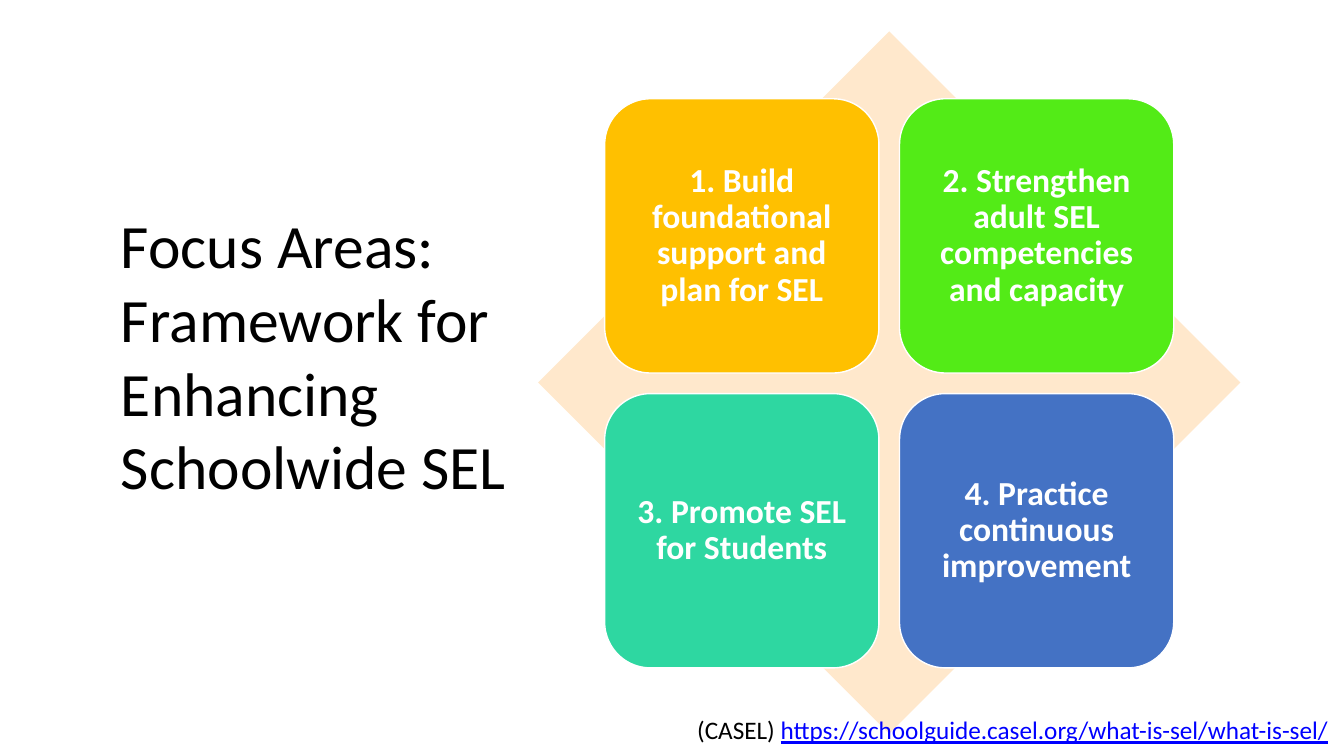
from pptx import Presentation
from pptx.dml.color import RGBColor
from pptx.enum.shapes import MSO_SHAPE
from pptx.enum.text import MSO_ANCHOR, PP_ALIGN
from pptx.util import Cm, Pt

DIAMOND = MSO_SHAPE.DIAMOND
ROUNDED = MSO_SHAPE.ROUNDED_RECTANGLE
MIDDLE = MSO_ANCHOR.MIDDLE
CENTER = PP_ALIGN.CENTER

BLACK = RGBColor(0x00, 0x00, 0x00)
WHITE = RGBColor(0xFF, 0xFF, 0xFF)
PEACH = RGBColor(0xFF, 0xE8, 0xCC)
AMBER = RGBColor(0xFF, 0xC0, 0x00)
GREEN = RGBColor(0x53, 0xEB, 0x17)
TEAL = RGBColor(0x2E, 0xD7, 0xA1)
BLUE = RGBColor(0x44, 0x72, 0xC4)
LINK_BLUE = RGBColor(0x00, 0x00, 0xFF)

FONT = "Calibri"
TITLE_LINES = ["Focus Areas:", "Framework for", "Enhancing Schoolwide SEL"]
FOCUS_AREAS = [
    ("1. Build foundational support and plan for SEL", AMBER),
    ("2. Strengthen adult SEL competencies and capacity", GREEN),
    ("3. Promote SEL for Students", TEAL),
    ("4. Practice continuous improvement", BLUE),
]

# Tile grid, in centimetres
GRID_LEFT, GRID_TOP = 15.24, 2.49
TILE_SIZE, TILE_STEP = 6.91, 7.43


def add_run(para, text, size, color, bold=False, underline=False):
    span = para.add_run()
    span.text = text
    span.font.name = FONT
    span.font.size = Pt(size)
    span.font.color.rgb = color
    span.font.bold = bold
    span.font.underline = underline


def set_margins(frame, margin):
    frame.margin_left = frame.margin_right = margin
    frame.margin_top = frame.margin_bottom = margin


def add_filled_shape(group, kind, left, top, size, color):
    shape = group.shapes.add_shape(kind, Cm(left), Cm(top), Cm(size), Cm(size))
    shape.shadow.inherit = False
    shape.fill.solid()
    shape.fill.fore_color.rgb = color
    return shape


def add_title(page):
    box = page.shapes.add_textbox(Cm(2.92), Cm(5.08), Cm(12.24), Cm(7.77))
    frame = box.text_frame
    frame.word_wrap = True
    set_margins(frame, Cm(0.13))
    for index, line in enumerate(TITLE_LINES):
        para = frame.add_paragraph() if index else frame.paragraphs[0]
        add_run(para, line, 44, BLACK)


def add_tile(group, left, top, text, color):
    tile = add_filled_shape(group, ROUNDED, left, top, TILE_SIZE, color)
    tile.line.color.rgb = WHITE
    tile.line.width = Pt(1)
    frame = tile.text_frame
    frame.word_wrap = True
    frame.vertical_anchor = MIDDLE
    set_margins(frame, Cm(0.25))
    para = frame.paragraphs[0]
    para.alignment = CENTER
    para.line_spacing = 0.9
    add_run(para, text, 24, WHITE, bold=True)


def add_diagram(page):
    group = page.shapes.add_group_shape()
    diamond = add_filled_shape(group, DIAMOND, 13.56, 0.79, 17.7, PEACH)
    diamond.line.fill.background()
    for index, (text, color) in enumerate(FOCUS_AREAS):
        row, column = divmod(index, 2)
        add_tile(group, GRID_LEFT + column * TILE_STEP,
                 GRID_TOP + row * TILE_STEP, text, color)


def add_source_line(page):
    box = page.shapes.add_textbox(Cm(17.32), Cm(17.88), Cm(16.79), Cm(1.02))
    box.text_frame.word_wrap = True
    para = box.text_frame.paragraphs[0]
    add_run(para, "(CASEL) ", 18, BLACK)
    add_run(para, "https://schoolguide.casel.org/what-is-sel/what-is-sel/",
            18, LINK_BLUE, underline=True)


def main():
    deck = Presentation()
    deck.slide_width, deck.slide_height = Cm(33.87), Cm(19.05)
    page = deck.slides.add_slide(deck.slide_layouts[6])

    # Title on the left, four focus areas on the right, source below
    add_title(page)
    add_diagram(page)
    add_source_line(page)

    deck.save("out.pptx")


if __name__ == "__main__":
    main()
